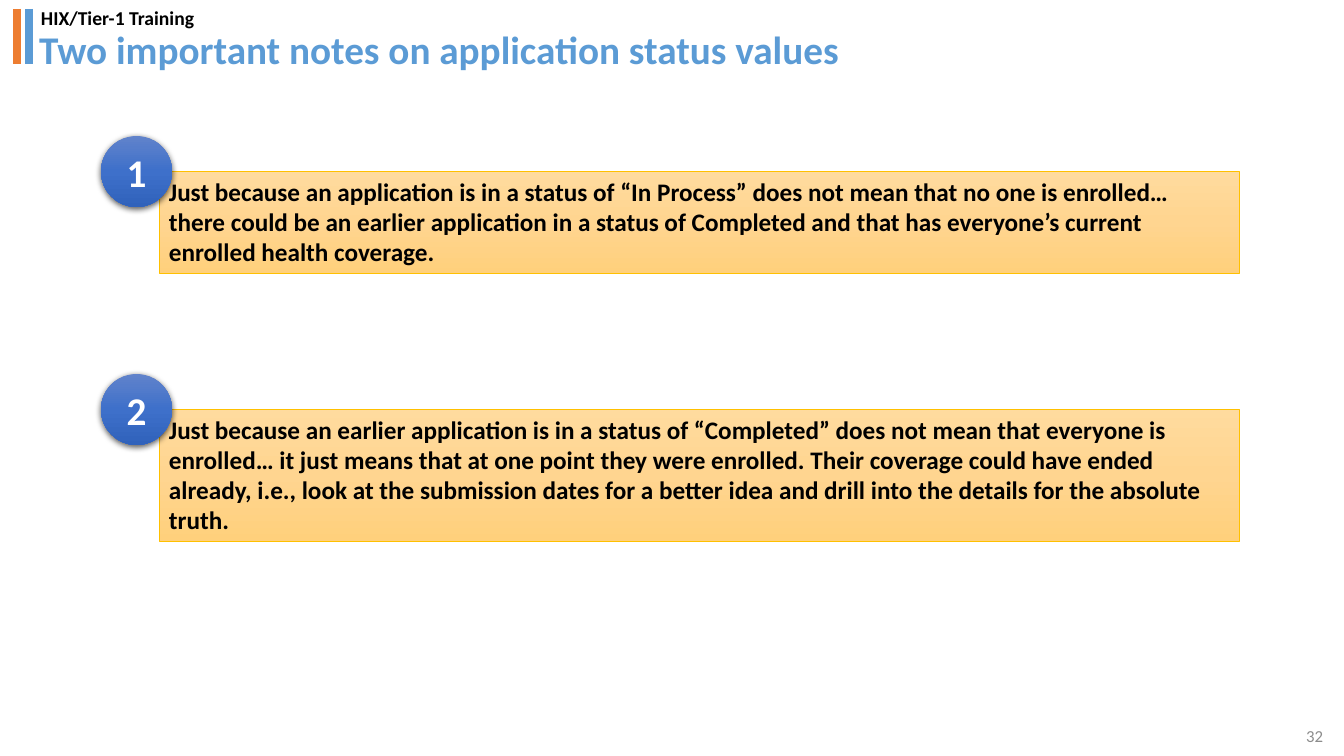
from lxml import etree
from pptx import Presentation
from pptx.dml.color import RGBColor
from pptx.enum.shapes import MSO_CONNECTOR, MSO_SHAPE
from pptx.enum.text import MSO_ANCHOR, MSO_AUTO_SIZE, PP_ALIGN
from pptx.oxml import parse_xml
from pptx.oxml.ns import nsdecls, qn
from pptx.util import Pt

PX = 914400 * 10 // 1008
LEFT, CENTER, RIGHT = PP_ALIGN.LEFT, PP_ALIGN.CENTER, PP_ALIGN.RIGHT
TOP, MIDDLE = MSO_ANCHOR.TOP, MSO_ANCHOR.MIDDLE
STRAIGHT = MSO_CONNECTOR.STRAIGHT
RECTANGLE, OVAL = MSO_SHAPE.RECTANGLE, MSO_SHAPE.OVAL
NO_AUTOFIT = MSO_AUTO_SIZE.NONE

COLORS = {
    "blue": "5B9BD5",
    "orange": "ED7D31",
    "gold": "FFC000",
    "black": "000000",
    "white": "FFFFFF",
    "gray": "8C8C8C",
}
NOTE_GRADIENT = ["FFDB9E", "FFD590", "FFD07C"]
BADGE_GRADIENT = ["6183CB", "3E70CA", "3062BB"]


def write(shape, text, size, color, bold=True, align=LEFT, anchor=TOP):
    frame = shape.text_frame
    frame.text = text
    frame.word_wrap = True
    frame.auto_size = NO_AUTOFIT
    frame.vertical_anchor = anchor
    paragraph = frame.paragraphs[0]
    paragraph.alignment = align
    font = paragraph.runs[0].font
    for attribute, value in {"name": "Calibri", "size": Pt(size), "bold": bold}.items():
        setattr(font, attribute, value)
    font.color.rgb = RGBColor.from_string(COLORS[color])


def add_gradient_shape(kind, box, gradient):
    """Add a shape with a vertical three-stop gradient and no shadow."""
    shape = slide.shapes.add_shape(kind, *(PX * n for n in box))
    stops = "".join(
        f'<a:gs pos="{i * 50000}"><a:srgbClr val="{color}"/></a:gs>'
        for i, color in enumerate(gradient)
    )
    shape._element.spPr.append(parse_xml(
        f'<a:gradFill {nsdecls("a")} rotWithShape="1"><a:gsLst>{stops}</a:gsLst>'
        '<a:lin ang="5400000" scaled="0"/></a:gradFill>'
    ))
    shape.shadow.inherit = False
    return shape


prs = Presentation()
prs.slide_width, prs.slide_height = 1344 * PX, 756 * PX
slide = prs.slides.add_slide(prs.slide_layouts[5])

# Header
for x, color in [(29, "blue"), (17, "orange")]:
    bar = slide.shapes.add_connector(STRAIGHT, x * PX, 9 * PX, x * PX, 64 * PX)
    bar.line.color.rgb = RGBColor.from_string(COLORS[color])
    bar.line.width = Pt(6)
    etree.SubElement(bar._element.spPr, qn("a:effectLst"))

course = slide.shapes.add_textbox(31 * PX, 1 * PX, 241 * PX, 34 * PX)
write(course, "HIX/Tier-1 Training", 14, "black")

title = slide.shapes.title
title.left, title.top, title.width, title.height = (PX * n for n in (29, 30, 1175, 43))
write(title, "Two important notes on application status values", 28, "blue", anchor=MIDDLE)
title.text_frame.paragraphs[0].line_spacing = 0.9

page_number = slide.shapes.add_textbox(1261 * PX, 723 * PX, 72 * PX, 25 * PX)
write(page_number, "32", 12, "gray", bold=False, align=RIGHT, anchor=MIDDLE)

# Numbered notes
notes = [
    (102, "Just because an application is in a status of “In Process” does not mean that "
          "no one is enrolled… there could be an earlier application in a status of Completed "
          "and that has everyone’s current enrolled health coverage."),
    (132, "Just because an earlier application is in a status of “Completed” does not mean "
          "that everyone is enrolled… it just means that at one point they were enrolled. "
          "Their coverage could have ended already, i.e., look at the submission dates for a "
          "better idea and drill into the details for the absolute truth."),
]
for i, (height, text) in enumerate(notes):
    top = 136 + i * 238
    note = add_gradient_shape(RECTANGLE, (159, top + 35, 1080, height), NOTE_GRADIENT)
    note.line.color.rgb = RGBColor.from_string(COLORS["gold"])
    note.line.width = Pt(0.5)
    write(note, text, 18, "black")

    badge = add_gradient_shape(OVAL, (101, top, 71, 71), BADGE_GRADIENT)
    badge.line.fill.background()
    badge._element.spPr.find(qn("a:effectLst")).append(parse_xml(
        f'<a:outerShdw {nsdecls("a")} blurRad="57150" dist="19050" dir="5400000" '
        f'algn="ctr" rotWithShape="0"><a:srgbClr val="{COLORS["black"]}">'
        '<a:alpha val="63000"/></a:srgbClr></a:outerShdw>'
    ))
    write(badge, str(i + 1), 28, "white", align=CENTER, anchor=MIDDLE)

prs.save("out.pptx")
